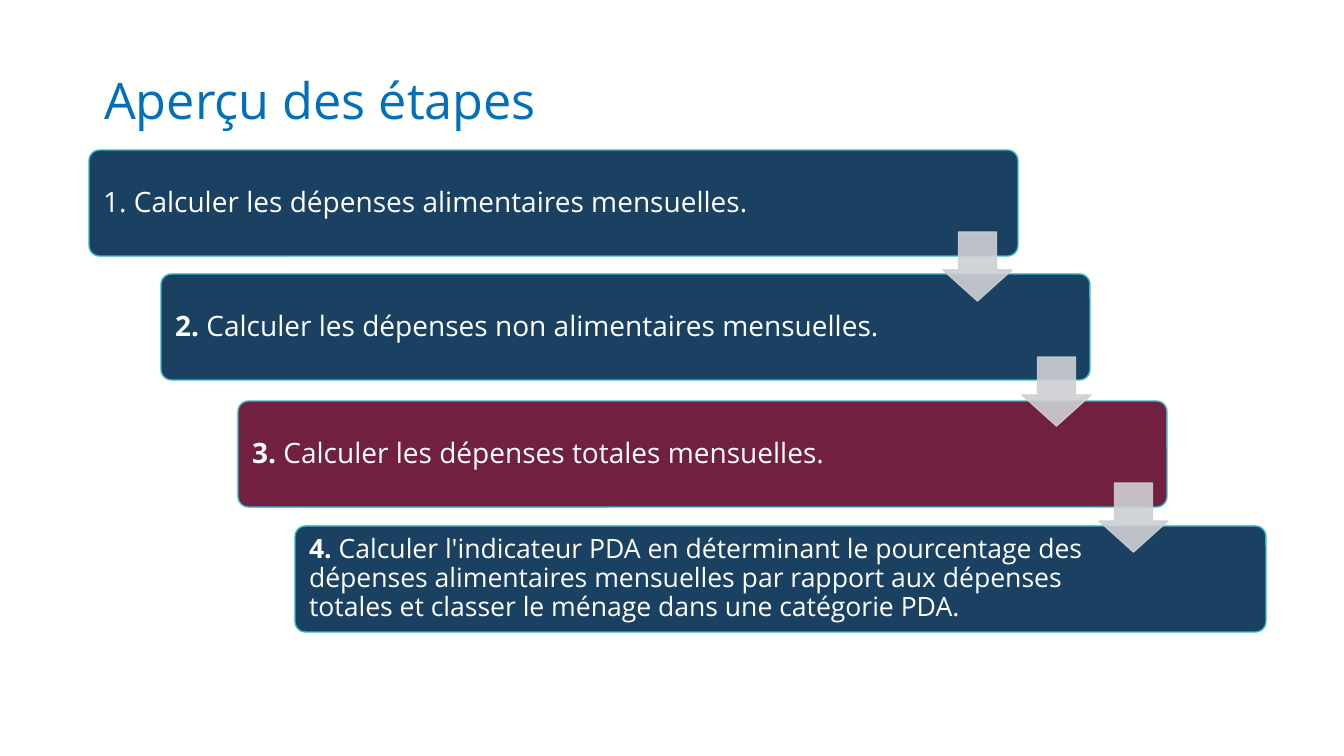
from lxml.etree import SubElement
from pptx import Presentation
from pptx.dml.color import RGBColor
from pptx.enum.shapes import MSO_SHAPE as Shape
from pptx.enum.text import MSO_ANCHOR as Anchor, MSO_AUTO_SIZE as AutoSize, PP_ALIGN as Align
from pptx.oxml.ns import qn
from pptx.util import Pt

PX = 914400 / 100.8
COLORS = {
    "background": "FFFFFE",
    "title": "0070BA",
    "step": "1A4161",
    "highlight": "722040",
    "outline": "36B5C5",
    "arrow": "CDCFD2",
    "text": "FFFFFE",
}


def px(*lengths):
    return [round(length * PX) for length in lengths]


def add_run(paragraph, text, size, color, bold=False):
    run = paragraph.add_run()
    run.text = text
    run.font.name = "Open Sans"
    run.font.size = Pt(size)
    run.font.bold = bold
    run.font.color.rgb = RGBColor.from_string(COLORS[color])


deck = Presentation()
deck.slide_width, deck.slide_height = px(1344, 756)
slide = deck.slides.add_slide(deck.slide_layouts[5])
slide.background.fill.solid()
slide.background.fill.fore_color.rgb = RGBColor.from_string(COLORS["background"])

title = slide.shapes.title
title.left, title.top, title.width, title.height = px(94, 40, 1162, 127)
title.text_frame.auto_size = AutoSize.NONE
title.text_frame.vertical_anchor = Anchor.MIDDLE
heading = title.text_frame.paragraphs[0]
heading.alignment = Align.LEFT
heading.line_spacing = 0.9
add_run(heading, "Aperçu des étapes", 36, "title")

# left, top, width, fill, text size, number is bold, text
steps = [
    (89, 150, 929, "step", 20, False, "Calculer les dépenses alimentaires mensuelles."),
    (161, 274, 929, "step", 20, True, "Calculer les dépenses non alimentaires mensuelles."),
    (238, 401, 929, "highlight", 20, True, "Calculer les dépenses totales mensuelles."),
    (295, 526, 971, "step", 19, True,
     "Calculer l'indicateur PDA en déterminant le pourcentage des dépenses alimentaires "
     "mensuelles par rapport aux dépenses totales et classer le ménage dans une catégorie PDA."),
]
for number, (left, top, width, fill, size, bold, wording) in enumerate(steps, 1):
    step = slide.shapes.add_shape(Shape.ROUNDED_RECTANGLE, *px(left, top, width, 106))
    step.adjustments[0] = 0.1
    step.shadow.inherit = False
    step.fill.solid()
    step.fill.fore_color.rgb = RGBColor.from_string(COLORS[fill])
    step.line.color.rgb = RGBColor.from_string(COLORS["outline"])
    step.line.width = Pt(1)
    frame = step.text_frame
    frame.word_wrap = True
    frame.vertical_anchor = Anchor.MIDDLE
    frame.margin_left, frame.margin_top, frame.margin_right, frame.margin_bottom = px(11, 11, 164, 11)
    sentence = frame.paragraphs[0]
    sentence.alignment = Align.LEFT
    sentence.line_spacing = 0.9
    add_run(sentence, f"{number}. ", size, "text", bold)
    add_run(sentence, wording, size, "text")

for left, top in [(943, 232), (1022, 357), (1099, 483)]:
    arrow = slide.shapes.add_shape(Shape.DOWN_ARROW, *px(left, top, 69, 69))
    arrow.adjustments[0] = 0.55
    arrow.adjustments[1] = 0.45
    arrow.shadow.inherit = False
    arrow.fill.solid()
    arrow.fill.fore_color.rgb = RGBColor.from_string(COLORS["arrow"])
    arrow.line.color.rgb = RGBColor.from_string(COLORS["arrow"])
    arrow.line.width = Pt(1)
    for color in arrow._element.spPr.iter(qn("a:srgbClr")):
        SubElement(color, qn("a:alpha"), val="90000")

deck.save("out.pptx")
